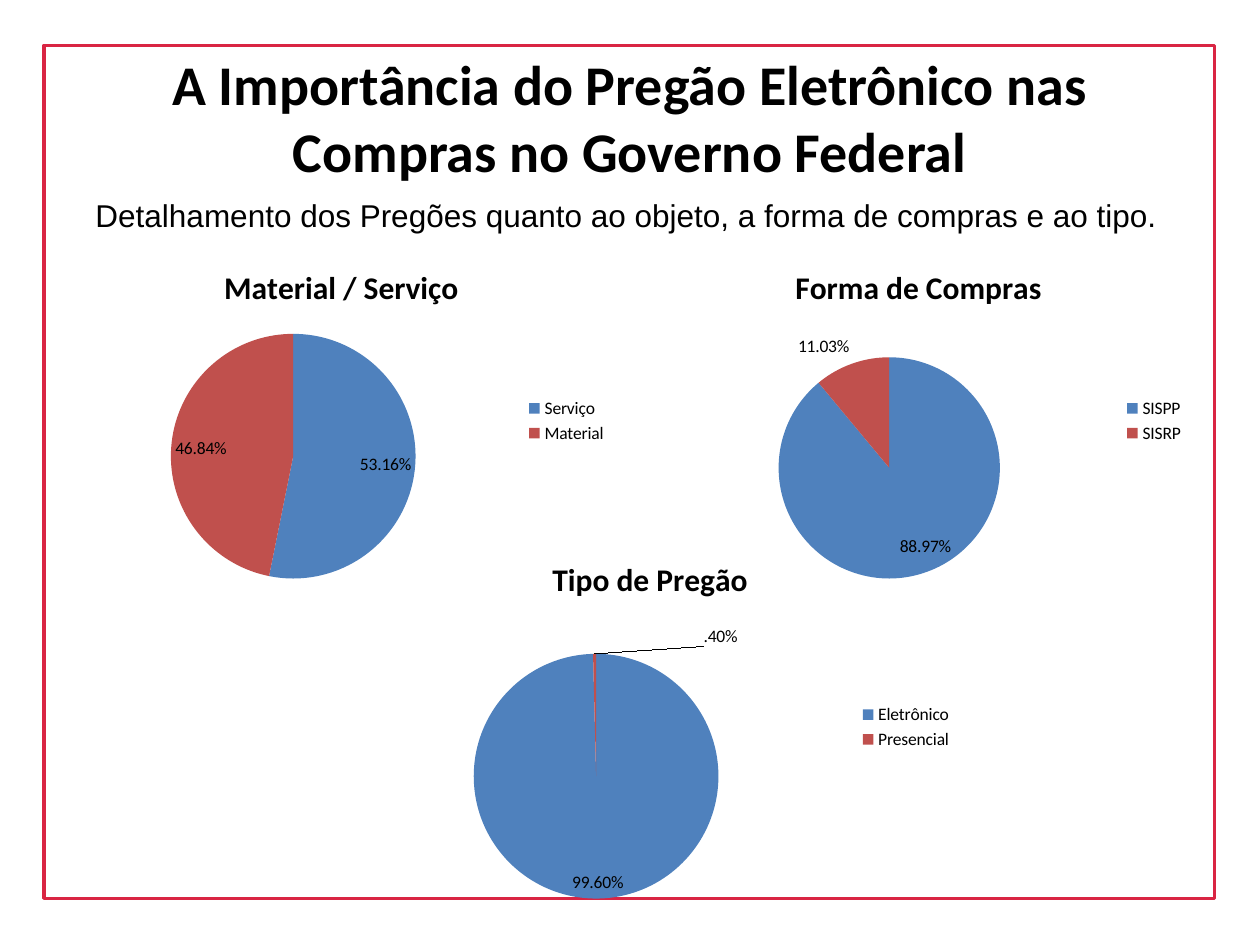
from lxml.etree import SubElement
from pptx import Presentation
from pptx.chart.data import CategoryChartData
from pptx.dml.color import RGBColor
from pptx.enum.chart import XL_CHART_TYPE, XL_LABEL_POSITION, XL_LEGEND_POSITION
from pptx.enum.shapes import MSO_SHAPE
from pptx.enum.text import MSO_ANCHOR, PP_ALIGN
from pptx.oxml import parse_xml
from pptx.oxml.ns import nsdecls, qn
from pptx.util import Inches, Pt

COLORS = {"text": "000000", "frame": "D92543", "first": "4F81BD", "second": "C0504D"}
PERCENT = "#.00%"


class SlideBuilder:
    def __init__(self, slide):
        self.slide = slide

    def color(self, name):
        return RGBColor.from_string(COLORS[name])

    def style(self, font, **values):
        for name, value in values.items():
            setattr(font, name, value)
        font.color.rgb = self.color("text")

    def frame(self, *box):
        shape = self.slide.shapes.add_shape(MSO_SHAPE.RECTANGLE, *map(Inches, box))
        shape.shadow.inherit = False
        shape.fill.background()
        shape.line.color.rgb = self.color("frame")
        shape.line.width = Pt(2)

    def text(self, text, box, alignment, anchor, **font_values):
        text_frame = self.slide.shapes.add_textbox(*map(Inches, box)).text_frame
        text_frame.word_wrap = True
        text_frame.vertical_anchor = anchor
        paragraph = text_frame.paragraphs[0]
        paragraph.text = text
        paragraph.alignment = alignment
        self.style(paragraph.runs[0].font, **font_values)

    def pie(self, title, values, box):
        data = CategoryChartData(number_format=PERCENT)
        data.categories = list(values)
        data.add_series("Series 1", list(values.values()))
        chart = self.slide.shapes.add_chart(
            XL_CHART_TYPE.PIE, *map(Inches, box), data).chart
        self.style(chart.font, name="Calibri", size=Pt(10))

        chart.has_title = True
        chart.chart_title.include_in_layout = False
        paragraph = chart.chart_title.text_frame.paragraphs[0]
        paragraph.text = title
        self.style(paragraph.runs[0].font, name="Calibri", size=Pt(18), bold=True)

        chart.has_legend = True
        chart.legend.position = XL_LEGEND_POSITION.RIGHT
        chart.legend.include_in_layout = False

        plot = chart.plots[0]
        plot.vary_by_categories = True
        series = plot.series[0]
        for index, name in enumerate(("first", "second")):
            fill = series.points[index].format.fill
            fill.solid()
            fill.fore_color.rgb = self.color(name)
        label_values = {"show_value": True, "show_percentage": False,
                        "number_format": PERCENT, "number_format_is_linked": False}
        for name, value in label_values.items():
            setattr(series.data_labels, name, value)
        return series

    def move_label(self, series, index, x, y):
        """Shift one label by fractions of the chart size, with a leader line."""
        series.points[index].data_label.position = XL_LABEL_POSITION.BEST_FIT
        labels = series.data_labels._element
        label = labels.find(qn("c:dLbl"))
        layout = parse_xml(f"<c:layout {nsdecls('c')}><c:manualLayout/></c:layout>")
        for axis, offset in (("x", x), ("y", y)):
            SubElement(layout[0], qn(f"c:{axis}"), val=str(offset))
        number_format = parse_xml(
            f'<c:numFmt {nsdecls("c")} formatCode="{PERCENT}" sourceLinked="0"/>')
        label.find(qn("c:idx")).addnext(layout)
        layout.addnext(number_format)
        leader = labels.find(qn("c:showLeaderLines"))
        if leader is None:
            leader = SubElement(labels, qn("c:showLeaderLines"))
        leader.set("val", "1")


def main():
    presentation = Presentation()
    presentation.slide_width, presentation.slide_height = Inches(10), Inches(7.5)
    builder = SlideBuilder(presentation.slides.add_slide(presentation.slide_layouts[6]))
    builder.frame(0.35, 0.36, 9.29, 6.77)
    builder.text("A Importância do Pregão Eletrônico nas Compras no Governo Federal",
                 (0.5, 0.3, 9, 1.25), PP_ALIGN.CENTER, MSO_ANCHOR.MIDDLE,
                 name="Calibri", size=Pt(32), bold=True)
    builder.text("Detalhamento dos Pregões quanto ao objeto, a forma de compras e ao tipo.",
                 (0.66, 1.51, 8.67, 0.4), PP_ALIGN.JUSTIFY, MSO_ANCHOR.TOP,
                 name="Arial", size=Pt(18))
    builder.pie("Material / Serviço", {"Serviço": 0.5316, "Material": 0.4684},
                (0.5, 1.95, 4.42, 2.78))
    builder.pie("Forma de Compras", {"SISPP": 0.8897, "SISRP": 0.1103},
                (5.08, 1.95, 4.42, 2.78))
    auction_type = builder.pie("Tipo de Pregão", {"Eletrônico": 0.996, "Presencial": 0.004},
                               (2.66, 4.27, 5, 3))
    builder.move_label(auction_type, 1, 0.2, 0)
    presentation.save("out.pptx")


if __name__ == "__main__":
    main()
